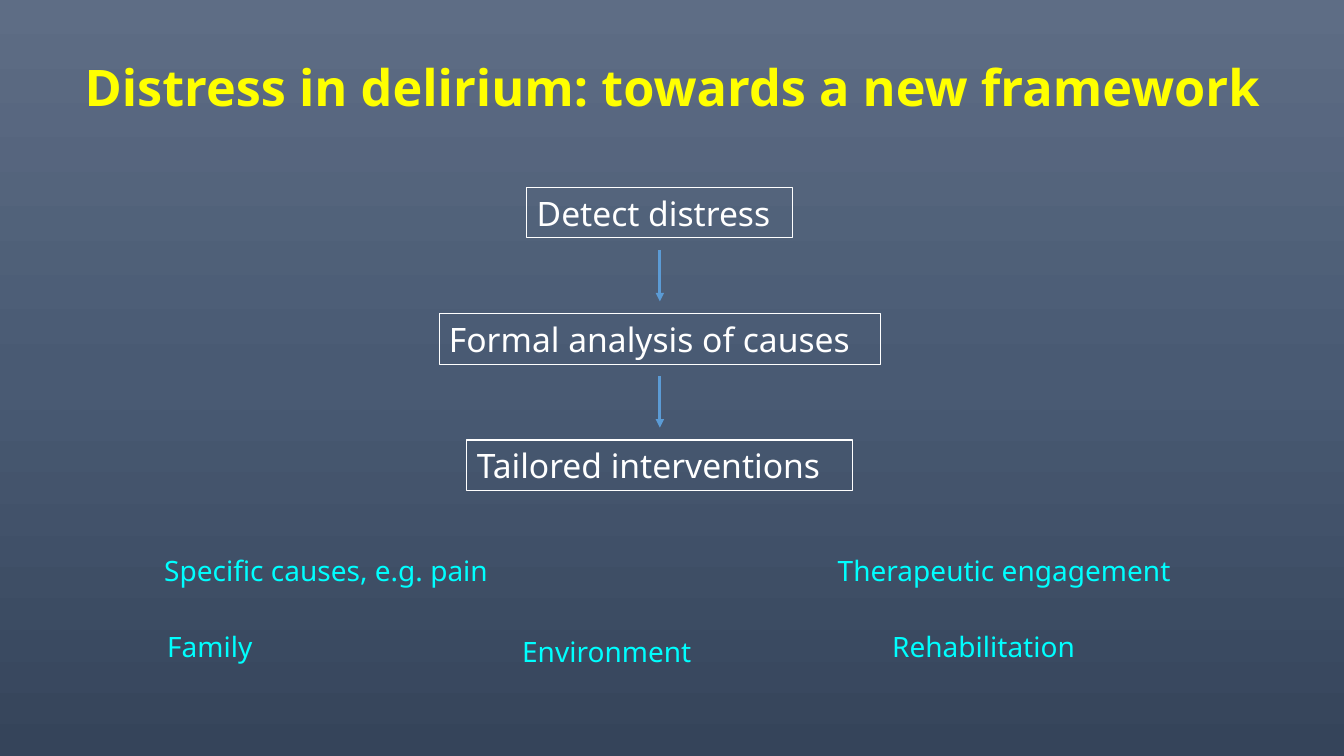
from copy import deepcopy

from lxml.etree import SubElement
from pptx import Presentation
from pptx.dml.color import RGBColor
from pptx.enum.shapes import MSO_CONNECTOR as Connector
from pptx.enum.text import MSO_ANCHOR as Anchor, MSO_AUTO_SIZE as AutoSize, PP_ALIGN as Align
from pptx.oxml.ns import qn
from pptx.util import Inches, Pt

WIDTH, HEIGHT = Inches(13.33), Inches(7.5)
WHITE, YELLOW, CYAN, BLUE = "FFFFFF", "FFFF00", "00FFFF", "5B9BD5"
BACKDROP = [(0, "5E6D85"), (0.5, "495A73"), (1, "35445A")]

# Places are percentages of the slide's width and height.
AXIS = 49.1
STEP_TOP, STEP_PITCH, STEP_HEIGHT = 24.8, 16.7, 6.67
ARROW_GAP, ARROW_LENGTH = 1.6, 6.8
STEPS = [
    ("Detect distress", 19.8),
    ("Formal analysis of causes", 32.86),
    ("Tailored interventions", 28.73),
]
INTERVENTION_HEIGHT = 5.87
INTERVENTIONS = [
    ("Specific causes, e.g. pain", 11.48, 72.53, 26.56),
    ("Therapeutic engagement", 61.59, 72.53, 26.78),
    ("Family", 11.7, 82.67, 8.25),
    ("Environment", 38.11, 83.33, 14.63),
    ("Rehabilitation", 65.64, 82.67, 15.83),
]


def rgb(value):
    return RGBColor.from_string(value)


def across(percent):
    return round(WIDTH * percent / 100)


def down(percent):
    return round(HEIGHT * percent / 100)


def write(frame, text, size, color, bold=False, align=Align.LEFT, spacing=None):
    paragraph = frame.paragraphs[0]
    paragraph.alignment = align
    paragraph.line_spacing = spacing
    run = paragraph.add_run()
    run.text = text
    font = run.font
    font.name, font.size, font.bold = "Noto Sans", Pt(size), bold
    font.color.rgb = rgb(color)


class FrameworkSlide:
    def __init__(self, deck):
        self.slide = deck.slides.add_slide(deck.slide_layouts[5])
        self.shapes = self.slide.shapes

    def backdrop(self, stops):
        fill = self.slide.background.fill
        fill.gradient()
        fill.gradient_angle = 270
        stop_list = next(self.slide.element.iter(qn("a:gsLst")))
        while len(stop_list) < len(stops):
            stop_list.append(deepcopy(stop_list[0]))
        for stop, (position, color) in zip(fill.gradient_stops, stops):
            stop.position = position
            stop.color.rgb = rgb(color)

    def title(self, text, left, top, width, height):
        heading = self.shapes.title
        heading.left, heading.top = across(left), down(top)
        heading.width, heading.height = across(width), down(height)
        frame = heading.text_frame
        frame.vertical_anchor = Anchor.MIDDLE
        frame.auto_size = AutoSize.NONE
        write(frame, text, 36, YELLOW, bold=True, align=Align.CENTER, spacing=0.9)

    def label(self, text, left, top, width, height, size, color, outline=None):
        box = self.shapes.add_textbox(across(left), down(top), across(width), down(height))
        box.text_frame.word_wrap = False
        box.text_frame.auto_size = AutoSize.SHAPE_TO_FIT_TEXT
        write(box.text_frame, text, size, color)
        if outline:
            box.line.color.rgb = rgb(outline)
            box.line.width = Pt(0.75)

    def down_arrow(self, x, top, length):
        arrow = self.shapes.add_connector(
            Connector.STRAIGHT, across(x), down(top), across(x), down(top + length))
        arrow.line.color.rgb = rgb(BLUE)
        arrow.line.width = Pt(2)
        properties = arrow.element.spPr
        SubElement(properties.find(qn("a:ln")), qn("a:tailEnd"), type="triangle")
        SubElement(properties, qn("a:effectLst"))


def main():
    deck = Presentation()
    deck.slide_width, deck.slide_height = WIDTH, HEIGHT
    page = FrameworkSlide(deck)
    page.backdrop(BACKDROP)
    page.title("Distress in delirium: towards a new framework", 4.58, 0.13, 90.85, 23.73)

    for index, (step, width) in enumerate(STEPS):
        top = STEP_TOP + index * STEP_PITCH
        page.label(step, AXIS - width / 2, top, width, STEP_HEIGHT, 24, WHITE, outline=WHITE)
        if index < len(STEPS) - 1:
            page.down_arrow(AXIS, top + STEP_HEIGHT + ARROW_GAP, ARROW_LENGTH)

    for intervention, left, top, width in INTERVENTIONS:
        page.label(intervention, left, top, width, INTERVENTION_HEIGHT, 20, CYAN)

    deck.save("out.pptx")


if __name__ == "__main__":
    main()
